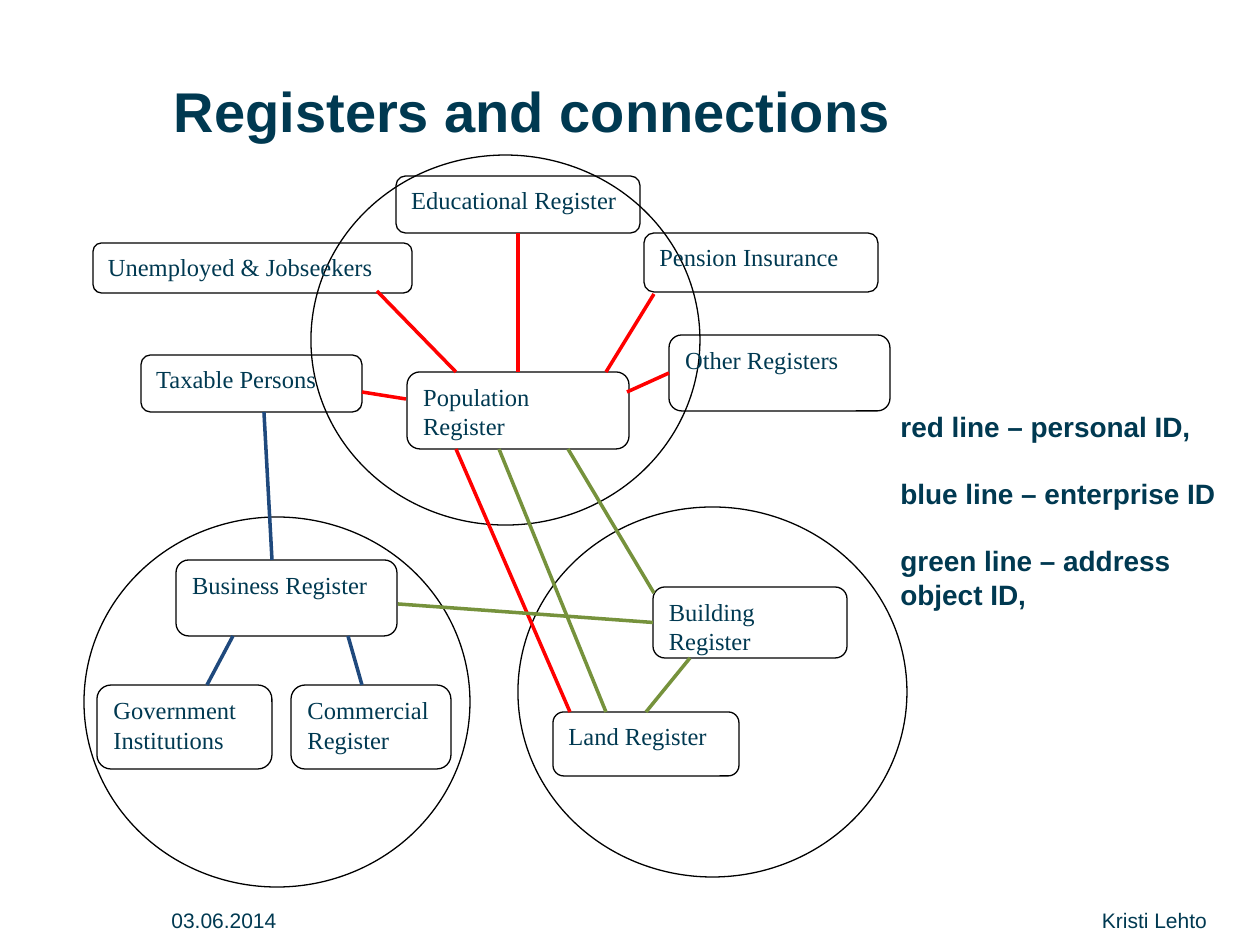
from typing import NamedTuple, Optional

from lxml.etree import SubElement
from pptx import Presentation
from pptx.dml.color import RGBColor
from pptx.enum.shapes import MSO_CONNECTOR, MSO_SHAPE
from pptx.enum.text import MSO_ANCHOR, PP_ALIGN
from pptx.oxml.ns import qn
from pptx.util import Emu, Pt

PX_PER_INCH = 126
COLORS = {
    "text": "003951",
    "outline": "000000",
    "personal": "FF0000",
    "enterprise": "1F497D",
    "address": "76923C",
}
TOP, LEFT, BOTTOM = 0, 1, 2


class Area(NamedTuple):
    x: int
    y: int
    width: int
    height: int


class Register(NamedTuple):
    label: str
    area: Area


class Joint(NamedTuple):
    register: str
    side: int


class Link(NamedTuple):
    identifier: str
    start: tuple[int, int]
    end: tuple[int, int]
    start_joint: Optional[Joint] = None
    end_joint: Optional[Joint] = None


class Caption(NamedTuple):
    lines: list[str]
    area: Area
    size: int
    bold: bool = False
    anchor: MSO_ANCHOR = MSO_ANCHOR.TOP
    align: PP_ALIGN = PP_ALIGN.LEFT
    inset: bool = True
    gap: float = 0
    spacing: Optional[float] = None


GROUPS = [
    Area(311, 155, 389, 370),
    Area(84, 517, 386, 370),
    Area(518, 507, 389, 370),
]

REGISTERS = [
    Register("Educational Register", Area(396, 176, 244, 57)),
    Register("Unemployed & Jobseekers", Area(93, 243, 319, 50)),
    Register("Taxable Persons", Area(141, 355, 221, 57)),
    Register("Pension Insurance", Area(644, 233, 234, 59)),
    Register("Other Registers", Area(669, 335, 221, 76)),
    Register("Population Register", Area(407, 372, 222, 77)),
    Register("Commercial Register", Area(291, 685, 160, 84)),
    Register("Business Register", Area(176, 560, 221, 76)),
    Register("Government Institutions", Area(97, 685, 175, 84)),
    Register("Building Register", Area(653, 587, 194, 71)),
    Register("Land Register", Area(553, 712, 186, 64)),
]

LINKS = [
    Link("personal", (362, 392), (406, 399)),
    Link("personal", (377, 291), (456, 372)),
    Link("personal", (518, 233), (518, 372),
         Joint("Educational Register", BOTTOM), Joint("Population Register", TOP)),
    Link("personal", (606, 372), (654, 294)),
    Link("personal", (627, 392), (669, 372), None, Joint("Other Registers", LEFT)),
    Link("personal", (456, 449), (570, 712)),
    Link("enterprise", (264, 412), (272, 560)),
    Link("enterprise", (348, 636), (362, 685)),
    Link("enterprise", (233, 636), (207, 685)),
    Link("address", (690, 658), (644, 712), None, Joint("Land Register", TOP)),
    Link("address", (568, 449), (654, 593)),
    Link("address", (398, 604), (654, 625), None, Joint("Building Register", LEFT)),
    Link("address", (499, 449), (606, 712)),
]

CAPTIONS = [
    Caption(["Registers and connections"], Area(174, 66, 1032, 89), 32,
            bold=True, anchor=MSO_ANCHOR.MIDDLE, inset=False),
    Caption(["03.06.2014"], Area(159, 895, 294, 50), 12, anchor=MSO_ANCHOR.MIDDLE),
    Caption(["Kristi Lehto"], Area(808, 912, 399, 32), 12,
            align=PP_ALIGN.RIGHT, inset=False, spacing=0.8),
    Caption(["red line – personal ID,", "blue line – enterprise ID",
             "green line – address object ID,"],
            Area(888, 403, 348, 217), 16, bold=True, gap=19.2),
]


def px(length: int) -> Emu:
    return Emu(round(length * 914400 / PX_PER_INCH))


def color(role: str) -> RGBColor:
    return RGBColor.from_string(COLORS[role])


def style_font(font, family: str, size: int, bold: bool = False) -> None:
    font.name = family
    font.size = Pt(size)
    font.bold = bold
    font.color.rgb = color("text")


def draw_outline(slide, kind: MSO_SHAPE, area: Area):
    outline = slide.shapes.add_shape(kind, *map(px, area))
    outline.shadow.inherit = False
    outline.fill.background()
    outline.line.color.rgb = color("outline")
    outline.line.width = Pt(0.75)
    return outline


def draw_register(slide, register: Register):
    box = draw_outline(slide, MSO_SHAPE.ROUNDED_RECTANGLE, register.area)
    frame = box.text_frame
    frame.text = register.label
    frame.word_wrap = True
    frame.vertical_anchor = MSO_ANCHOR.TOP
    label = frame.paragraphs[0]
    label.alignment = PP_ALIGN.LEFT
    label.space_after = Pt(10)
    style_font(label.runs[0].font, "Times New Roman", 14)
    return box


def draw_link(slide, link: Link, boxes: dict) -> None:
    connector = slide.shapes.add_connector(
        MSO_CONNECTOR.STRAIGHT, *map(px, link.start + link.end))
    connector.line.color.rgb = color(link.identifier)
    connector.line.width = Pt(2)
    SubElement(connector.element.spPr, qn("a:effectLst"))
    if link.start_joint:
        connector.begin_connect(boxes[link.start_joint.register], link.start_joint.side)
    if link.end_joint:
        connector.end_connect(boxes[link.end_joint.register], link.end_joint.side)


def draw_caption(slide, caption: Caption) -> None:
    frame = slide.shapes.add_textbox(*map(px, caption.area)).text_frame
    frame.text = "\n".join(caption.lines)
    frame.word_wrap = True
    frame.vertical_anchor = caption.anchor
    if not caption.inset:
        frame.margin_left = frame.margin_right = 0
        frame.margin_top = frame.margin_bottom = 0
    for index, paragraph in enumerate(frame.paragraphs):
        paragraph.alignment = caption.align
        paragraph.line_spacing = caption.spacing
        if index:
            paragraph.space_before = Pt(caption.gap)
        style_font(paragraph.runs[0].font, "Arial", caption.size, caption.bold)


def main() -> None:
    deck = Presentation()
    deck.slide_width, deck.slide_height = px(1260), px(945)
    slide = deck.slides.add_slide(deck.slide_layouts[6])
    for area in GROUPS:
        draw_outline(slide, MSO_SHAPE.OVAL, area)
    boxes = {register.label: draw_register(slide, register) for register in REGISTERS}
    for link in LINKS:
        draw_link(slide, link, boxes)
    for caption in CAPTIONS:
        draw_caption(slide, caption)
    deck.save("out.pptx")


if __name__ == "__main__":
    main()
